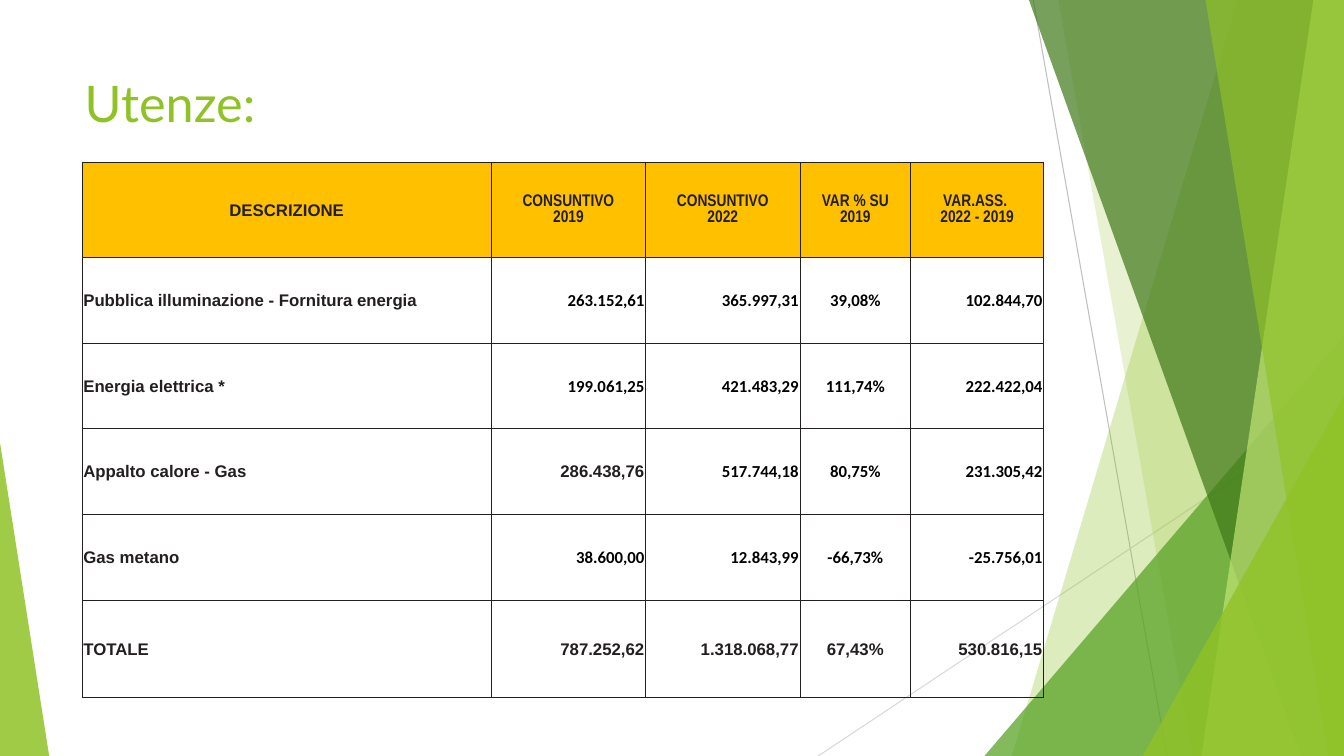
from lxml.etree import SubElement
from pptx import Presentation
from pptx.dml.color import RGBColor
from pptx.enum.shapes import MSO_CONNECTOR, MSO_SHAPE
from pptx.enum.text import MSO_ANCHOR, PP_ALIGN
from pptx.oxml import parse_xml
from pptx.oxml.ns import nsdecls, qn
from pptx.util import Cm, Pt

SLIDE_W, SLIDE_H = 33.87, 19.05
GREEN, INK, BLACK, AMBER = "90C226", "231F20", "000000", "FFC000"

COLUMN_WIDTHS = [10.31, 3.89, 3.89, 2.79, 3.35]
ROW_HEIGHTS = [2.39, 2.16, 2.16, 2.16, 2.16, 2.46]
COLUMN_ALIGNMENTS = [PP_ALIGN.LEFT, PP_ALIGN.RIGHT, PP_ALIGN.RIGHT,
                     PP_ALIGN.CENTER, PP_ALIGN.RIGHT]
UTILITIES = [
    ["DESCRIZIONE", "CONSUNTIVO\v2019", "CONSUNTIVO\v2022",
     "VAR % SU\v2019", "VAR.ASS. \v2022 - 2019"],
    ["Pubblica illuminazione - Fornitura energia",
     "263.152,61", "365.997,31", "39,08%", "102.844,70"],
    ["Energia elettrica *", "199.061,25", "421.483,29", "111,74%", "222.422,04"],
    ["Appalto calore - Gas", "286.438,76", "517.744,18", "80,75%", "231.305,42"],
    ["Gas metano", "38.600,00", "12.843,99", "-66,73%", "-25.756,01"],
    ["TOTALE", "787.252,62", "1.318.068,77", "67,43%", "530.816,15"],
]
TOTAL_ROW = len(UTILITIES) - 1
ARIAL_FIGURE = (3, 1)  # the one figure above the total set in Arial


def rgb(hex_colour):
    return RGBColor.from_string(hex_colour)


def paint(shape, colour, opacity):
    """Flat translucent fill, without outline or shadow."""
    shape.shadow.inherit = False
    shape.line.fill.background()
    shape.fill.solid()
    shape.fill.fore_color.rgb = rgb(colour)
    srgb = shape.fill._xPr.find(".//" + qn("a:srgbClr"))
    SubElement(srgb, qn("a:alpha"), val=str(opacity * 1000))


def add_wedge(slide, left, top, width, height, apex, colour, opacity):
    wedge = slide.shapes.add_shape(MSO_SHAPE.ISOSCELES_TRIANGLE,
                                   Cm(left), Cm(top), Cm(width), Cm(height))
    wedge.adjustments[0] = apex
    paint(wedge, colour, opacity)


def add_band(slide, left, top, width, height, top_x, bottom_x, colour, opacity):
    """Band with a slanted left side that reaches the right edge of the box."""
    right, bottom = left + width, top + height
    corners = [(right, top), (right, bottom), (left + bottom_x, bottom)]
    builder = slide.shapes.build_freeform(Cm(left + top_x), Cm(top))
    builder.add_line_segments([(Cm(x), Cm(y)) for x, y in corners], close=True)
    paint(builder.convert_to_shape(), colour, opacity)


def add_hairline(slide, x1, y1, x2, y2, colour):
    hairline = slide.shapes.add_connector(MSO_CONNECTOR.STRAIGHT,
                                          Cm(x1), Cm(y1), Cm(x2), Cm(y2))
    hairline.line.color.rgb = rgb(colour)
    hairline.line.width = Pt(0.75)
    SubElement(hairline._element.spPr, qn("a:effectLst"))


def add_ribbons(slide, left, top, width, height):
    """Overlapping green facets along the right edge."""
    box = (left, top, width, height)
    right, bottom = left + width, top + height
    add_hairline(slide, left + 1.23, top, left + 4.6, bottom, "BFBFBF")
    add_hairline(slide, right, top + 10.24, left - 4.19, bottom, "D9D9D9")
    add_band(slide, *box, 6.38, 0.69, GREEN, 30)
    add_band(slide, *box, 1.86, 5.24, GREEN, 20)
    add_wedge(slide, left, top + 8.46, width, height - 8.46, 1, "54A021", 72)
    add_band(slide, *box, 1.12, 7.98, "3F7819", 70)
    add_band(slide, *box, 8.29, 5.47, "C0E474", 70)
    add_band(slide, *box, 5.57, 8.67, GREEN, 65)
    add_wedge(slide, left + 3.99, top + 9.98, width - 3.99, height - 9.98,
              1, GREEN, 80)


def set_title(slide, left, top, width, height):
    title = slide.shapes.title
    title.left, title.top = Cm(left), Cm(top)
    title.width, title.height = Cm(width), Cm(height)
    frame = title.text_frame
    frame.text = "Utenze:"
    frame.vertical_anchor = MSO_ANCHOR.TOP
    heading = frame.paragraphs[0]
    heading.alignment = PP_ALIGN.LEFT
    font = heading.runs[0].font
    font.name, font.size = "Lato", Pt(36)
    font.color.rgb = rgb(GREEN)


def add_borders(cell):
    properties = cell._tc.get_or_add_tcPr()
    for side in ("lnL", "lnR", "lnT", "lnB"):
        properties.append(parse_xml(
            f'<a:{side} {nsdecls("a")} w="{Pt(0.5)}"><a:solidFill>'
            f'<a:srgbClr val="{INK}"/></a:solidFill></a:{side}>'))


def cell_font(row, column):
    """Font name and colour by place in the table."""
    if row == 0 and column > 0:
        return "Arial Narrow", INK
    if column == 0 or row == TOTAL_ROW or (row, column) == ARIAL_FIGURE:
        return "Arial", INK
    return "Calibri", BLACK


def fill_cell(cell, row, column, text):
    add_borders(cell)
    if row == 0:
        cell.fill.solid()
        cell.fill.fore_color.rgb = rgb(AMBER)
    else:
        cell.fill.background()
    cell.vertical_anchor = MSO_ANCHOR.MIDDLE
    cell.margin_left = cell.margin_right = cell.margin_top = Cm(0.03)
    cell.margin_bottom = 0
    paragraph = cell.text_frame.paragraphs[0]
    paragraph.text = text
    paragraph.alignment = PP_ALIGN.CENTER if row == 0 else COLUMN_ALIGNMENTS[column]
    name, colour = cell_font(row, column)
    for run in paragraph.runs:
        run.font.name, run.font.size, run.font.bold = name, Pt(12), True
        run.font.color.rgb = rgb(colour)


def add_utilities_table(slide, left, top):
    table = slide.shapes.add_table(
        len(ROW_HEIGHTS), len(COLUMN_WIDTHS), Cm(left), Cm(top),
        Cm(sum(COLUMN_WIDTHS)), Cm(sum(ROW_HEIGHTS))).table
    table.first_row = table.horz_banding = False
    for column, width in zip(table.columns, COLUMN_WIDTHS):
        column.width = Cm(width)
    for row, height in zip(table.rows, ROW_HEIGHTS):
        row.height = Cm(height)
    for row, texts in enumerate(UTILITIES):
        for column, text in enumerate(texts):
            fill_cell(table.cell(row, column), row, column, text)


def main():
    presentation = Presentation()
    presentation.slide_width, presentation.slide_height = Cm(SLIDE_W), Cm(SLIDE_H)
    slide = presentation.slides.add_slide(presentation.slide_layouts[5])

    # Background facets
    add_ribbons(slide, 24.81, 0, SLIDE_W - 24.81, SLIDE_H)
    add_wedge(slide, 0, 11.15, 1.24, SLIDE_H - 11.15, 0, GREEN, 85)

    # Heading and figures
    set_title(slide, 1.88, 1.7, 23.88, 2.06)
    add_utilities_table(slide, 2.07, 4.09)

    presentation.save("out.pptx")


if __name__ == "__main__":
    main()
